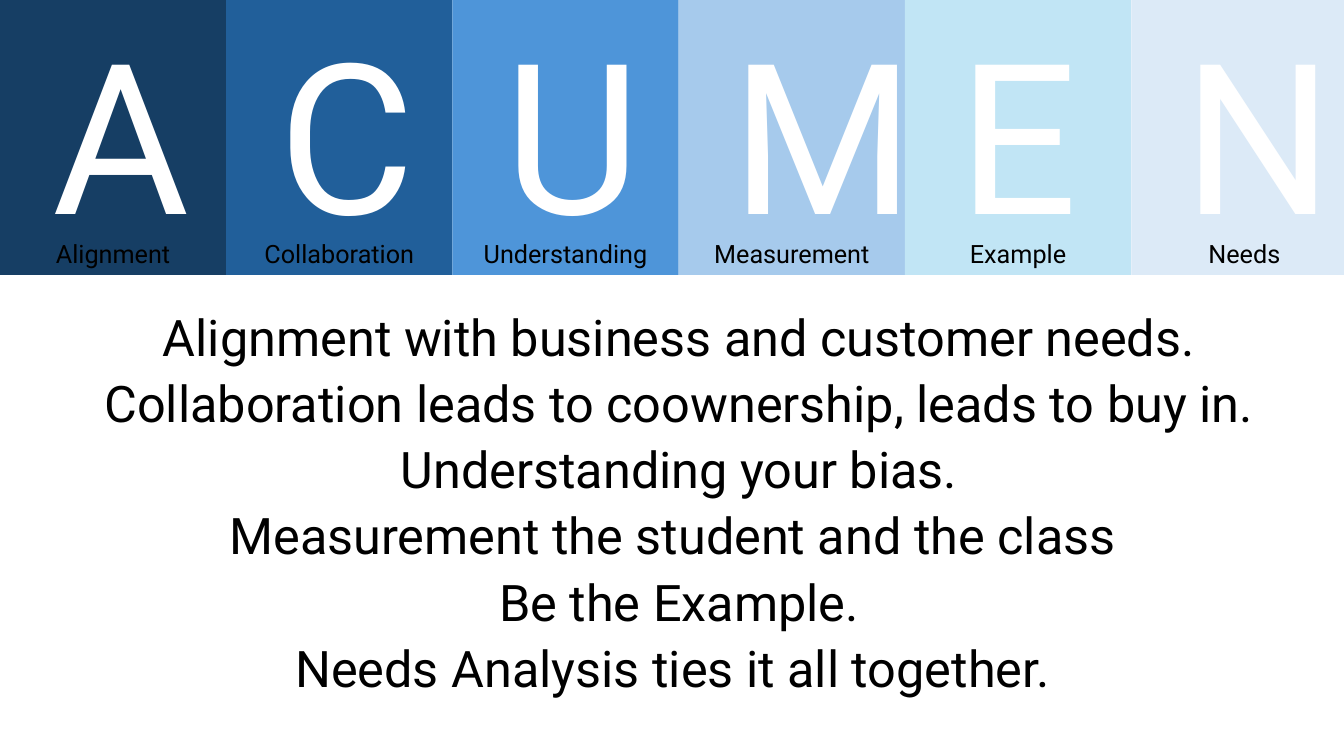
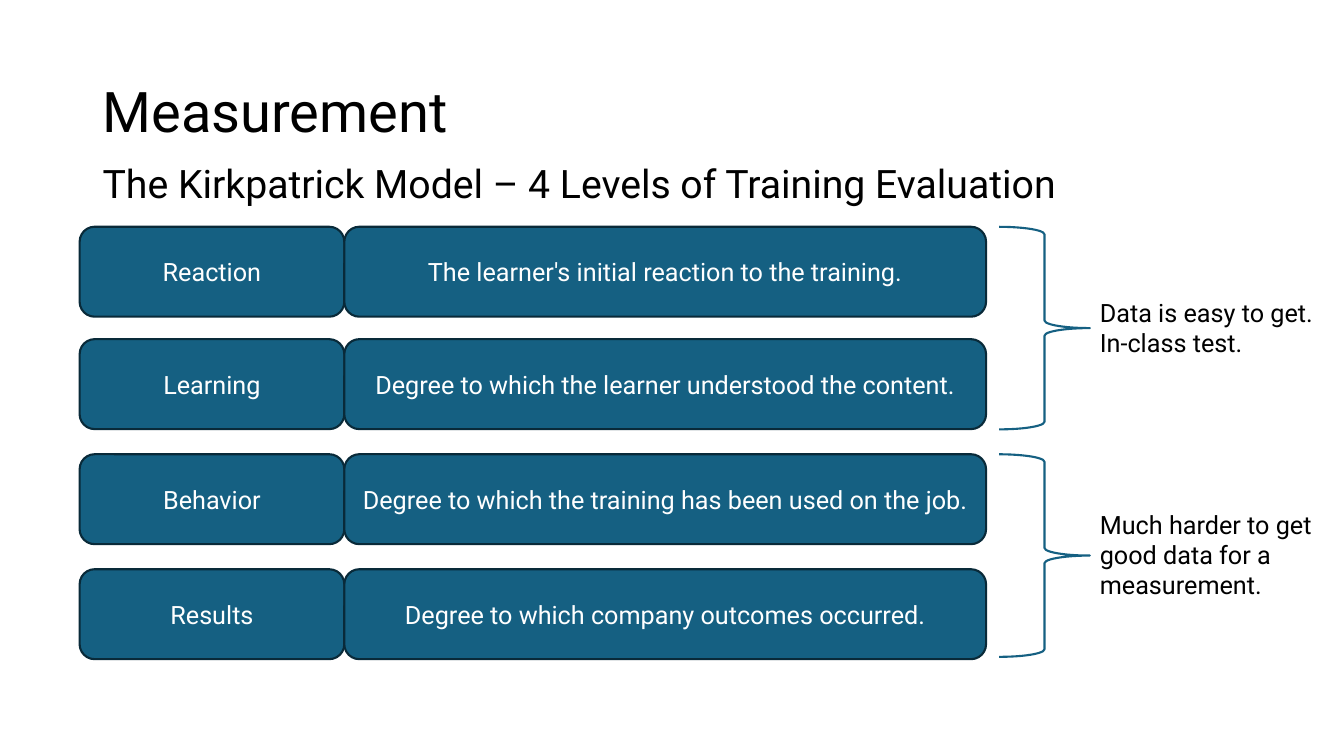
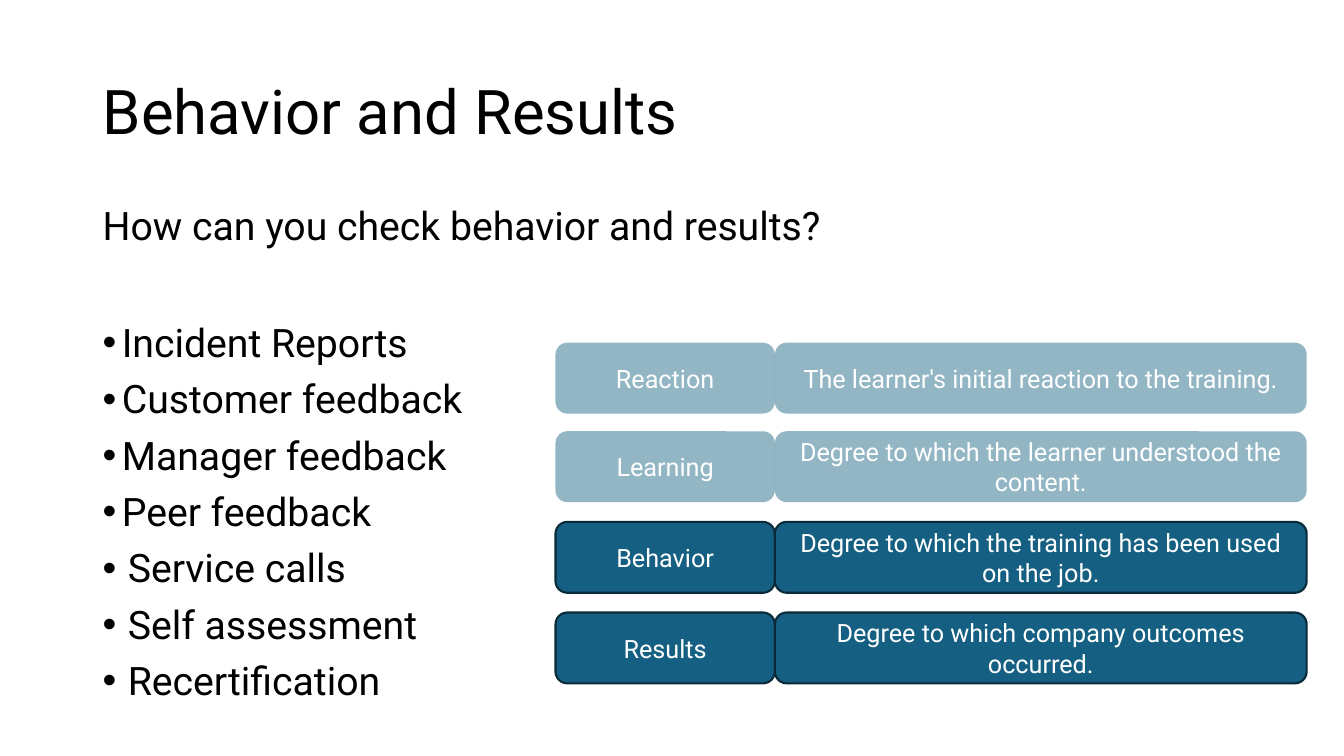
from lxml import etree
from pptx import Presentation
from pptx import util as u
from pptx.dml.color import RGBColor
from pptx.enum import shapes, text
from pptx.oxml.ns import qn

# Shared style
W, H = 13.33, 7.5
FACE, BLACK, WHITE = "Roboto", "000000", "FFFFFF"
TEAL, EDGE = "156082", "092A39"
MID, LEFT = text.PP_ALIGN.CENTER, text.PP_ALIGN.LEFT
TOP, MIDDLE = text.MSO_ANCHOR.TOP, text.MSO_ANCHOR.MIDDLE
SHAPE = shapes.MSO_SHAPE
MARGIN, WIDE = 0.92, 11.5

# Kirkpatrick levels, and their grid in percent of the panel
LEVELS = [
    ("Reaction", "The learner's initial reaction to the training."),
    ("Learning", "Degree to which the learner understood the content."),
    ("Behavior", "Degree to which the training has been used on the job."),
    ("Results", "Degree to which company outcomes occurred."),
]
ROWS, TALL = [0, 26, 52.6, 79.2], 20.8
COLS = [(0, 29.2), (29.2, 70.8)]


def color(target, code):
    target.rgb = RGBColor.from_string(code)


def inches(box):
    return [u.Inches(n) for n in box]


def write(shape, lines, size, ink=BLACK, align=LEFT, anchor=TOP, gap=0, **form):
    """Fill a shape with paragraphs; gap is the space before all but the first."""
    frame = shape.text_frame
    frame.word_wrap = True
    frame.vertical_anchor = anchor
    for i, line in enumerate(lines):
        par = frame.paragraphs[0] if i == 0 else frame.add_paragraph()
        par.text = line
        look = {"alignment": align, "space_before": u.Pt(gap if i else 0), **form}
        for key, value in look.items():
            setattr(par, key, value)
        for key, value in {"name": FACE, "size": u.Pt(size)}.items():
            setattr(par.font, key, value)
        color(par.font.color, ink)
    return frame


def label(slide, box, lines, size, **form):
    return write(slide.shapes.add_textbox(*inches(box)), lines, size, **form)


def block(slide, kind, box, fill=None, line=None, alpha=None):
    shape = slide.shapes.add_shape(kind, *inches(box))
    shape.shadow.inherit = False
    if fill:
        shape.fill.solid()
        color(shape.fill.fore_color, fill)
    else:
        shape.fill.background()
    if alpha:
        tint = shape.fill._xPr.find(qn("a:solidFill"))[0]
        etree.SubElement(tint, qn("a:alpha")).set("val", str(alpha * 1000))
    if line:
        color(shape.line.color, line)
        shape.line.width = u.Pt(1.5)
    else:
        shape.line.fill.background()
    return shape


def title(slide, words, size):
    label(slide, (MARGIN, 0.41, WIDE, 1.45), [words], size,
          anchor=MIDDLE, line_spacing=0.9)


def bullet(par, indent):
    props = par._p.get_or_add_pPr()
    props.set("marL", str(u.Inches(indent)))
    props.set("indent", str(-u.Inches(indent)))
    after = props.find(qn("a:defRPr"))
    for tag, key, value in (("a:buFont", "typeface", "Arial"),
                            ("a:buChar", "char", "•")):
        mark = etree.Element(qn(tag))
        mark.set(key, value)
        if after is None:
            props.append(mark)
        else:
            after.addprevious(mark)


def banner(slide, height, words, fills):
    """Coloured columns with an initial and its word, above a white sheet."""
    step = 11.22 / 5
    for i, fill in enumerate(fills):
        x = i * step
        block(slide, SHAPE.RECTANGLE, (x, 0, min(step, W - x), H), fill)
    block(slide, SHAPE.RECTANGLE, (0, height, W, H - height), WHITE)
    for i, word in enumerate(words):
        for part, size, ink, y, wide, tall in (
                (word[0], 150, WHITE, 0, 1.4, 2.63),
                (word, 18, BLACK, 2.32, 1.93, 0.4)):
            label(slide, ((i + 0.5) * step - wide / 2, y, wide, tall), [part],
                  size, ink=ink, align=MID)


def panel(slide, box, faded=0):
    """Four levels with their meanings; the first ones may be faded."""
    x, y, w, h = box
    for i, (row, level) in enumerate(zip(ROWS, LEVELS)):
        style = {"alpha": 46} if i < faded else {"line": EDGE}
        for (col, wide), words in zip(COLS, level):
            cell = (x + w * col / 100, y + h * row / 100,
                    w * wide / 100, h * TALL / 100)
            shape = block(slide, SHAPE.ROUNDED_RECTANGLE, cell, TEAL, **style)
            write(shape, [words], 18, ink=WHITE, align=MID, anchor=MIDDLE)


def remark(slide, box, lines):
    """Brace with a note beside its tip."""
    x, y, w, h = box
    brace = 0.9
    block(slide, SHAPE.RIGHT_BRACE, (x, y, brace, h), line=TEAL)
    label(slide, (x + brace, y - 0.01, w - brace, h), lines, 18, anchor=MIDDLE)


def acumen(slide):
    words = ["Alignment", "Collaboration", "Understanding",
             "Measurement", "Example", "Needs"]
    fills = ["163E64", "215F9A", "4E95D9", "A6CAEC", "C1E5F5", "DCEAF7"]
    banner(slide, 2.73, words, fills)
    label(slide, (0.23, 2.99, 13.01, 4), [
        "Alignment with business and customer needs.",
        "Collaboration leads to coownership, leads to buy in.",
        "Understanding your bias.",
        "Measurement the student and the class ",
        "Be the Example.",
        "Needs Analysis ties it all together. ",
    ], 36, align=MID, gap=4)


def measure(slide):
    title(slide, "Measurement", 40)
    label(slide, (MARGIN, 1.58, WIDE, 0.77),
          ["The Kirkpatrick Model – 4 Levels of Training Evaluation"], 28,
          line_spacing=0.9)
    x, y, w, h = area = (0.79, 2.25, 8.99, 4.29)
    panel(slide, area)
    notes = [["Data is easy to get.", "In-class test."],
             ["Much harder to get good data for a measurement."]]
    for row, lines in zip(ROWS[::2], notes):
        remark(slide, (x + w + 0.13, y + h * row / 100, 3.42, 2.01), lines)


def check(slide):
    title(slide, "Behavior and Results", 44)
    label(slide, (MARGIN, 1.95, 8.38, 0.57),
          ["How can you check behavior and results?"], 28)
    # Ways to check, with a wider indent from the fifth on
    ways = ["Incident Reports", "Customer feedback", "Manager feedback",
            "Peer feedback", "Service calls", "Self assessment",
            "Recertification"]
    frame = label(slide, (MARGIN, 3.16, 4.5, 4), ways, 28,
                  gap=10, line_spacing=0.9)
    for i, par in enumerate(frame.paragraphs):
        bullet(par, 0.19 if i < 4 else 0.25)
    panel(slide, (5.51, 3.4, 7.45, 3.38), faded=2)


def main():
    deck = Presentation()
    deck.slide_width, deck.slide_height = inches((W, H))
    for build in (acumen, measure, check):
        build(deck.slides.add_slide(deck.slide_layouts[6]))
    deck.save("out.pptx")


if __name__ == "__main__":
    main()
